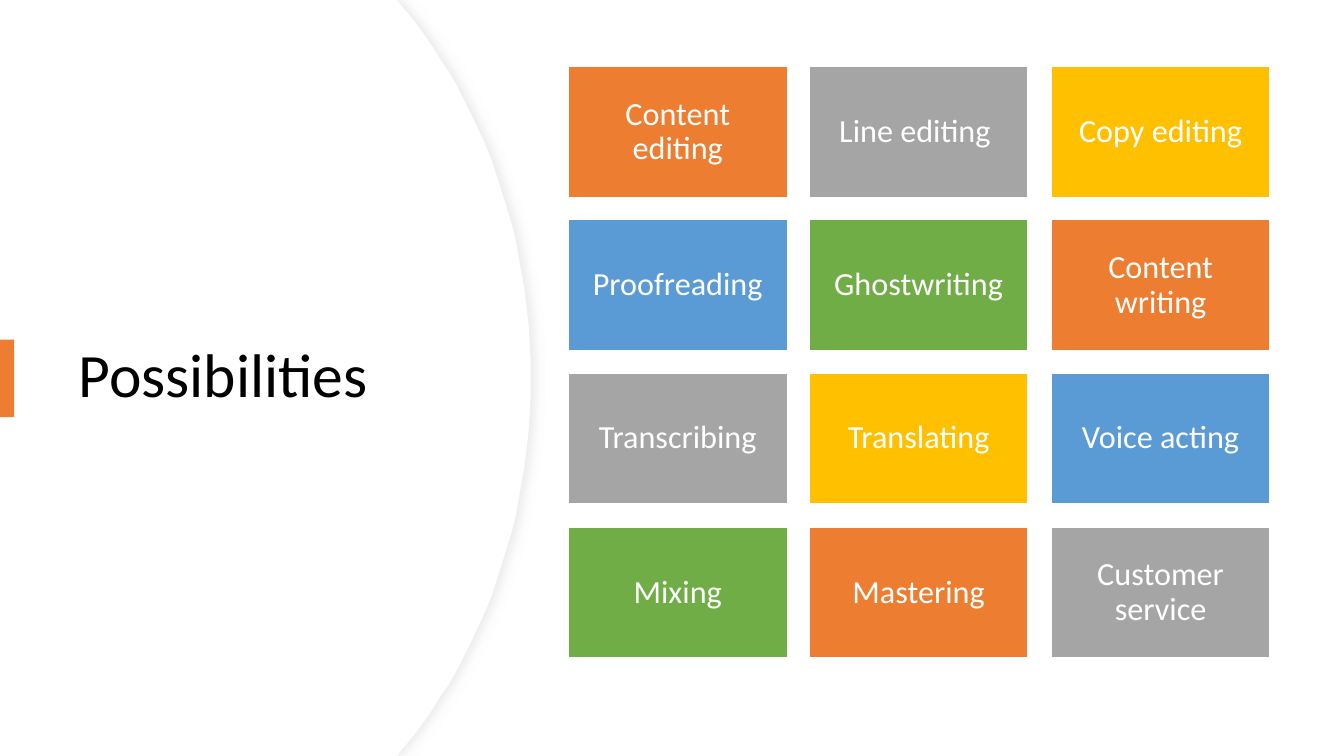
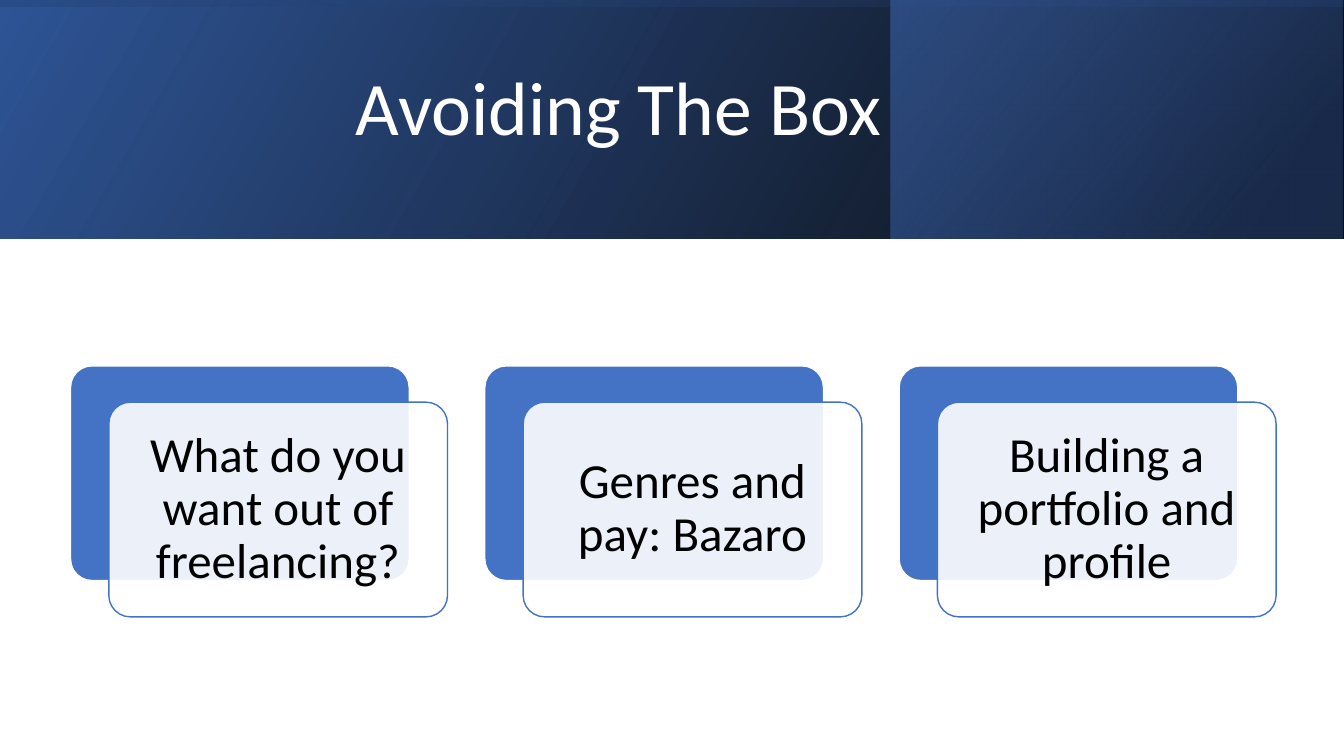
import itertools

import lxml.etree
import pptx
import pptx.dml.color
import pptx.enum.shapes
import pptx.enum.text
import pptx.oxml
import pptx.oxml.ns
import pptx.util

PX = 9144
FONT = "Calibri"
WHITE, BLACK = "FFFFFF", "000000"
ORANGE, GRAY, GOLD, SKY, GREEN = "ED7D31", "A5A5A5", "FFC000", "5B9BD5", "70AD47"
BLUE, NAVY, DEEP = "4472C4", "203864", "2F5597"

color = pptx.dml.color.RGBColor.from_string
qualify = pptx.oxml.ns.qn
SHAPES = pptx.enum.shapes.MSO_SHAPE
ALIGN = pptx.enum.text.PP_ALIGN


def paint(shape, fill=None, line=None, width=1.0):
    shape.shadow.inherit = False
    if fill:
        shape.fill.solid()
        shape.fill.fore_color.rgb = color(fill)
    else:
        shape.fill.background()
    if line:
        shape.line.color.rgb = color(line)
        shape.line.width = pptx.util.Pt(width)
    else:
        shape.line.fill.background()


def write(shape, text, size=23, ink=WHITE, align=ALIGN.CENTER, side=10, edge=10):
    frame = shape.text_frame
    frame.word_wrap = True
    frame.vertical_anchor = pptx.enum.text.MSO_ANCHOR.MIDDLE
    frame.margin_left = frame.margin_right = side * PX
    frame.margin_top = frame.margin_bottom = edge * PX
    para = frame.paragraphs[0]
    para.alignment = align
    para.line_spacing = 0.9
    span = para.add_run()
    span.text = text
    span.font.name = FONT
    span.font.size = pptx.util.Pt(size)
    span.font.color.rgb = color(ink)


deck = pptx.Presentation()
deck.slide_width, deck.slide_height = pptx.util.Inches(13.333), pptx.util.Inches(7.5)
blank = deck.slide_layouts[6]

page = deck.slides.add_slide(blank)
for right, outline in ((527, "EFEFEF"), (526, None)):
    start, control = right - 126, right - 48
    upper = []
    for step in range(25):
        t = step / 24
        u = 1 - t
        x = u**3 * start + 3 * u * u * t * control + (3 * u * t * t + t**3) * right
        y = 8 * u**3 + 3 * u * u * t * 102 + 3 * u * t * t * 232 + 375 * t**3
        upper.append((x, y))
    lower = [(x, 750 - y) for x, y in reversed(upper[:-1])]
    builder = page.shapes.build_freeform(0, 0, scale=PX)
    builder.add_line_segments([(394, 0), *upper, *lower, (394, 750), (0, 750)], close=True)
    panel = builder.convert_to_shape()
    paint(panel, WHITE, outline, 0.75)
    if outline:
        effects = panel.element.spPr.find(qualify("a:effectLst"))
        shadow = lxml.etree.SubElement(
            effects, qualify("a:outerShdw"), blurRad="88900", dist="38100", dir="0")
        tint = lxml.etree.SubElement(shadow, qualify("a:srgbClr"), val="D9D9D9")
        lxml.etree.SubElement(tint, qualify("a:alpha"), val="50000")

title = page.shapes.add_textbox(68 * PX, 127 * PX, 394 * PX, 495 * PX)
write(title, "Possibilities", size=44, ink=BLACK, align=ALIGN.LEFT, edge=5)
marker = page.shapes.add_shape(SHAPES.RECTANGLE, 0, 337 * PX, 14 * PX, 77 * PX)
paint(marker, ORANGE)

services = [
    "Content editing", "Line editing ", "Copy editing",
    "Proofreading", "Ghostwriting", "Content writing",
    "Transcribing", "Translating", "Voice acting",
    "Mixing", "Mastering", "Customer service",
]
tile_colors = itertools.cycle([ORANGE, GRAY, GOLD, SKY, GREEN])
for index, (service, fill) in enumerate(zip(services, tile_colors)):
    row, column = divmod(index, 3)
    left, top = 564 + column * 479 // 2, 66 + row * 457 // 3
    tile = page.shapes.add_shape(SHAPES.RECTANGLE, left * PX, top * PX, 217 * PX, 130 * PX)
    paint(tile, fill, WHITE)
    write(tile, service)

page = deck.slides.add_slide(blank)
bands = [
    ((0, 0, 1333, 237), 0, 330, [(0, BLACK, 96), (100, DEEP, 100)]),
    ((884, 0, 448, 237), 0, 320, [(19, NAVY, 68), (100, BLUE, 48)]),
    ((548, -548, 237, 1333), 270, 350, [(23, DEEP, 16), (99, BLACK, 45)]),
]
for place, rotation, angle, stops in bands:
    band = page.shapes.add_shape(SHAPES.RECTANGLE, *(length * PX for length in place))
    paint(band)
    band.rotation = rotation
    properties = band.element.spPr
    properties.find(qualify("a:xfrm")).set("flipH", "1")
    marks = "".join(
        f'<a:gs pos="{position * 1000}"><a:srgbClr val="{tone}">'
        f'<a:alpha val="{opacity * 1000}"/></a:srgbClr></a:gs>'
        for position, tone, opacity in stops)
    gradient = pptx.oxml.parse_xml(
        f'<a:gradFill {pptx.oxml.ns.nsdecls("a")} rotWithShape="1"><a:gsLst>{marks}</a:gsLst>'
        f'<a:lin ang="{angle * 60000}" scaled="0"/></a:gradFill>')
    properties.replace(properties.find(qualify("a:noFill")), gradient)

title = page.shapes.add_textbox(343 * PX, 72 * PX, 739 * PX, 76 * PX)
write(title, "Avoiding The Box", size=54, align=ALIGN.LEFT, edge=5)

topics = [
    "What do you want out of freelancing?",
    "Genres and pay: Bazaro",
    "Building a portfolio and profile",
]
for index, topic in enumerate(topics):
    left = 70 + index * 411
    for x, y, fill, line in ((left, 363, BLUE, WHITE), (left + 38, 399, WHITE, BLUE)):
        card = page.shapes.add_shape(
            SHAPES.ROUNDED_RECTANGLE, x * PX, y * PX, 336 * PX, 213 * PX)
        card.adjustments[0] = 0.1
        paint(card, fill, line)
    tint = card.element.spPr.find(qualify("a:solidFill"))[0]
    lxml.etree.SubElement(tint, qualify("a:alpha"), val="90000")
    write(card, topic, size=35, ink=BLACK, side=15, edge=15)

deck.save("out.pptx")
